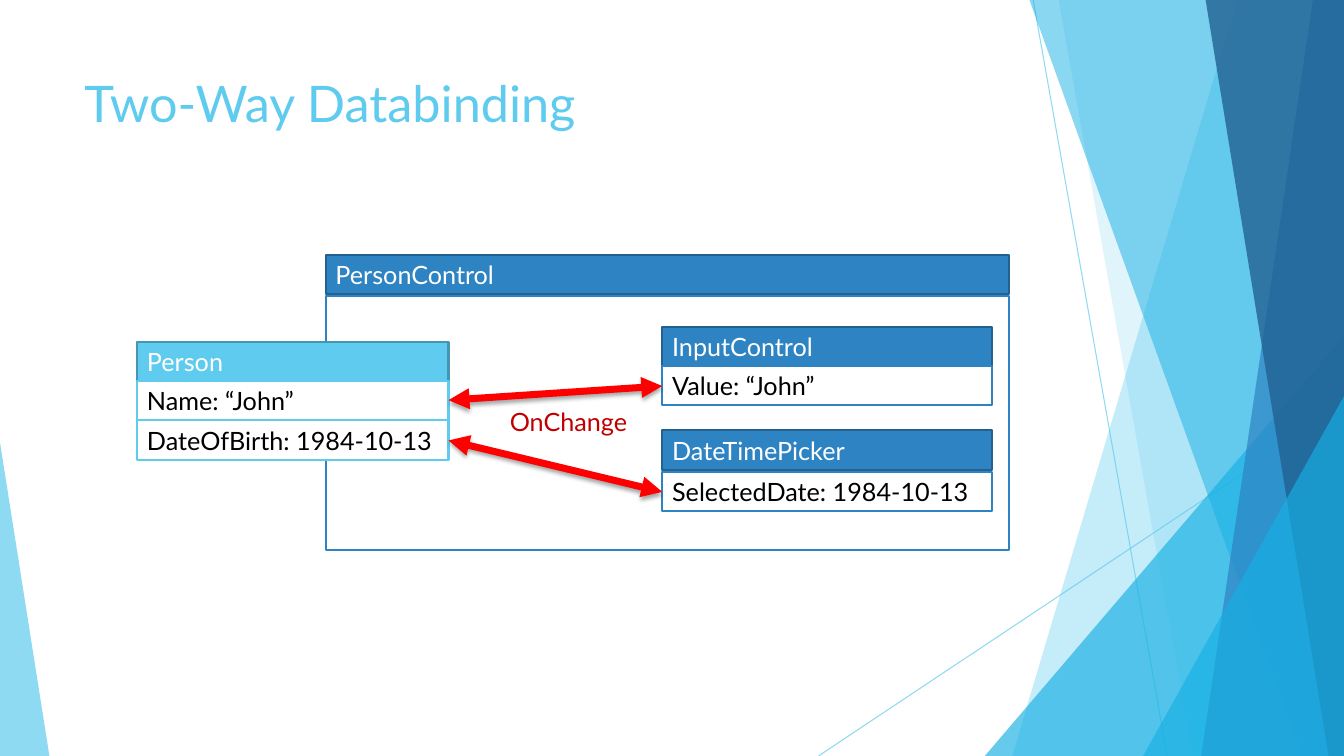
from lxml import etree
from pptx import Presentation
from pptx import util as u
from pptx.dml import color
from pptx.enum import shapes, text
from pptx.oxml import ns

COLORS = {
    "sky": "5FCBEF", "sky_edge": "4696B1", "cyan": "17B0E4",
    "blue": "2E83C3", "blue_edge": "226190", "navy": "226292",
    "white": "FFFFFF", "black": "000000", "red": "FF0000", "dark_red": "C00000",
}
RGB = {name: color.RGBColor.from_string(value) for name, value in COLORS.items()}


def set_alpha(shape, percent):
    tint = shape._element.spPr.find(".//" + ns.qn("a:srgbClr"))
    etree.SubElement(tint, ns.qn("a:alpha"), val=str(percent * 1000))


def write(shape, words, size, ink, anchor):
    frame = shape.text_frame
    for name, value in {"word_wrap": True, "vertical_anchor": anchor}.items():
        setattr(frame, name, value)
    paragraph = frame.paragraphs[0]
    paragraph.text = words
    paragraph.alignment = text.PP_ALIGN.LEFT
    for name, value in {"name": "Lato", "size": u.Pt(size)}.items():
        setattr(paragraph.font, name, value)
    paragraph.font.color.rgb = RGB[ink]


presentation = Presentation()
presentation.slide_width, presentation.slide_height = u.Pt(960), u.Pt(540)
slide = presentation.slides.add_slide(presentation.slide_layouts[6])

lines = [
    ((738, 0), (833.76, 540), "sky", 0.75),
    ((960, 290.16), (584.64, 540), "sky", 0.75),
]
arrows = [
    ((320.4, 314.64), (473.04, 351.36), "red", 5),
    ((320.4, 285.84), (473.04, 275.76), "red", 5),
]


def add_line(start, end, ink, width):
    line = slide.shapes.add_connector(
        shapes.MSO_CONNECTOR.STRAIGHT, *[u.Pt(value) for value in start + end])
    line.line.color.rgb = RGB[ink]
    line.line.width = u.Pt(width)
    return line, etree.SubElement(line._element.spPr, ns.qn("a:effectLst"))


for spec_line in lines:
    line, effects = add_line(*spec_line)
    set_alpha(line, 70)

TOP = -0.6
facets = [
    ("band", (884.16, 722.88), "sky", 36),
    ("band", (756, 851.76), "sky", 20),
    ("triangle", (703.44, 239.76, 256.56, 300.24, 1), "cyan", 66),
    ("band", (735.12, 929.52), "cyan", 50),
    ("band", (938.16, 858.24), "blue", 70),
    ("band", (861.12, 948.96), "navy", 80),
    ("triangle", (816.48, 282.96, 143.52, 257.04, 1), "cyan", 66),
    ("triangle", (0, 316.08, 35.28, 223.92, 0), "sky", 70),
]
for kind, geometry, fill, alpha in facets:
    if kind == "band":
        top_x, bottom_x = geometry
        builder = slide.shapes.build_freeform(top_x, TOP, scale=u.Pt(1))
        builder.add_line_segments([(960, TOP), (960, 540), (bottom_x, 540)], close=True)
        facet = builder.convert_to_shape()
    else:
        *box, apex = geometry
        facet = slide.shapes.add_shape(
            shapes.MSO_SHAPE.ISOSCELES_TRIANGLE, *[u.Pt(value) for value in box])
        facet.adjustments[0] = apex
    facet.shadow.inherit = False
    facet.fill.solid()
    facet.fill.fore_color.rgb = RGB[fill]
    facet.line.fill.background()
    set_alpha(facet, alpha)

ROW = 28.08
styles = {
    "header": ("blue", "blue_edge", "white"),
    "field": ("white", "blue", "black"),
    "person_header": ("sky", "sky_edge", "white"),
    "person_field": ("white", "sky", "black"),
}
columns = {"control": (232.56, 488.16), "person": (97.92, 222.48), "input": (473.04, 235.44)}
boxes = [
    ("control", 182.16, ROW, "header", "PersonControl"),
    ("control", 211.68, 181.44, "field", ""),
    ("person", 244.08, ROW, "person_header", "Person"),
    ("person", 244.08 + ROW, ROW, "person_field", "Name: “John”"),
    ("person", 244.08 + 2 * ROW, ROW, "person_field", "DateOfBirth: 1984-10-13"),
    ("input", 233.28, ROW, "header", "InputControl"),
    ("input", 233.28 + ROW, ROW, "field", "Value: “John”"),
    ("input", 307.44, ROW, "header", "DateTimePicker"),
    ("input", 336.96, ROW, "field", "SelectedDate: 1984-10-13"),
]
for column, top, height, style, words in boxes:
    left, width = columns[column]
    fill, edge, ink = styles[style]
    box = slide.shapes.add_shape(
        shapes.MSO_SHAPE.RECTANGLE, u.Pt(left), u.Pt(top), u.Pt(width), u.Pt(height))
    box.shadow.inherit = False
    box.fill.solid()
    box.fill.fore_color.rgb = RGB[fill]
    box.line.color.rgb = RGB[edge]
    box.line.width = u.Pt(1.5)
    if words:
        write(box, words, 18, ink, text.MSO_ANCHOR.MIDDLE)

for arrow in arrows:
    line, effects = add_line(*arrow)
    stroke = line.line._get_or_add_ln()
    for end in ("a:headEnd", "a:tailEnd"):
        etree.SubElement(stroke, ns.qn(end), type="triangle")
    shadow = etree.SubElement(
        effects, ns.qn("a:outerShdw"), blurRad=str(u.Pt(3)), dist=str(u.Pt(2)),
        dir="5400000", rotWithShape="0")
    tint = etree.SubElement(shadow, ns.qn("a:srgbClr"), val=COLORS["black"])
    etree.SubElement(tint, ns.qn("a:alpha"), val="35000")

labels = [
    ((53.28, 48.24, 820.8, 103.68), "Two-Way Databinding", 36, "sky"),
    ((357.12, 286.56, 120.24, 28.8), "OnChange", 18, "dark_red"),
]
for place, words, size, ink in labels:
    label = slide.shapes.add_textbox(*[u.Pt(value) for value in place])
    write(label, words, size, ink, text.MSO_ANCHOR.TOP)

presentation.save("out.pptx")
